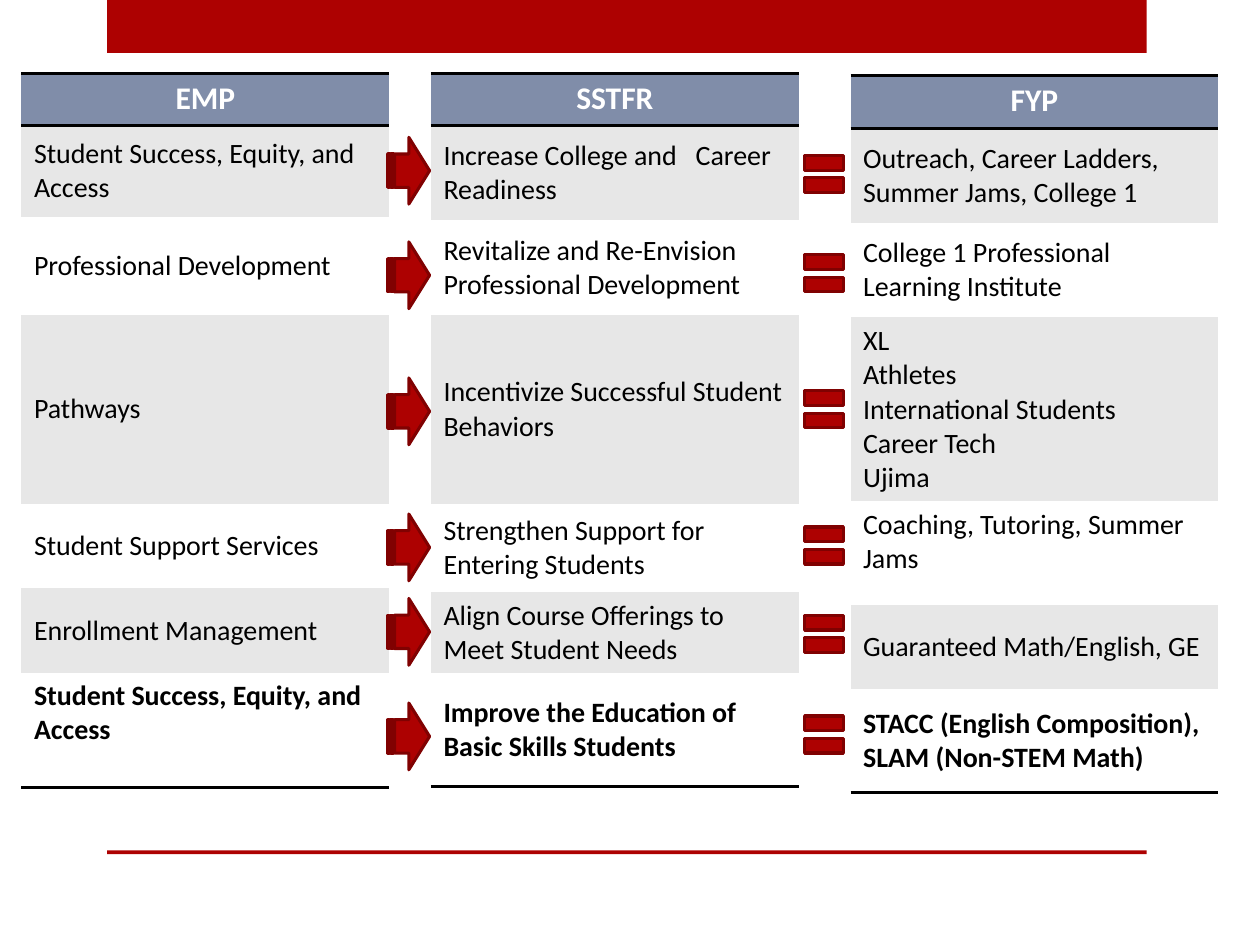
from dataclasses import dataclass

from lxml.etree import SubElement
from pptx import Presentation
from pptx.dml.color import RGBColor
from pptx.enum.shapes import MSO_SHAPE as Shape
from pptx.enum.text import MSO_ANCHOR as Anchor, PP_ALIGN as Align
from pptx.oxml.ns import qn
from pptx.util import Inches, Pt

COLORS = {
    "red": "AD0101",
    "dark_red": "800101",
    "header": "808DA9",
    "band": "E7E7E7",
    "white": "FFFFFF",
    "black": "000000",
}
FONT = "Calibri"
PLAIN_TABLE_STYLE = "{2D5ABB26-0587-4C30-8999-92F81FD0307C}"
COLUMN_WIDTH = 2.92


@dataclass
class Row:
    text: str
    height: float
    anchor: Anchor = Anchor.MIDDLE


@dataclass
class PlanColumn:
    title: str
    left: float
    top: float
    rows: list[Row]


@dataclass
class SymbolColumn:
    kind: Shape
    left: float
    width: float
    height: float
    tops: list[float]


PLAN_COLUMNS = [
    PlanColumn("EMP", 0.17, 0.58, [
        Row("Student Success, Equity, and Access", 0.72),
        Row("Professional Development", 0.78),
        Row("Pathways", 1.5),
        Row("Student Support Services", 0.67),
        Row("Enrollment Management", 0.67),
        Row("Student Success, Equity, and Access", 0.91, Anchor.TOP),
    ]),
    PlanColumn("SSTFR", 3.42, 0.58, [
        Row("Increase College and   Career Readiness", 0.75),
        Row("Revitalize and Re-Envision Professional Development", 0.75),
        Row("Incentivize Successful Student Behaviors", 1.5),
        Row("Strengthen Support for Entering Students", 0.7),
        Row("Align Course Offerings to Meet Student Needs", 0.64, Anchor.TOP),
        Row("Improve the Education of Basic Skills Students", 0.9),
    ]),
    PlanColumn("FYP", 6.75, 0.6, [
        Row("Outreach, Career Ladders, Summer Jams, College 1", 0.75),
        Row("College 1 Professional Learning Institute", 0.75),
        Row("XL\nAthletes\nInternational Students\nCareer Tech\nUjima", 1.46),
        Row("Coaching, Tutoring, Summer Jams", 0.82, Anchor.TOP),
        Row("Guaranteed Math/English, GE", 0.67),
        Row("STACC (English Composition), SLAM (Non-STEM Math)", 0.82),
    ]),
]
SYMBOL_COLUMNS = [
    SymbolColumn(Shape.STRIPED_RIGHT_ARROW, 3.08, 0.33, 0.53,
                 [1.09, 1.92, 3, 4.08, 4.75, 5.58]),
    SymbolColumn(Shape.MATH_EQUAL, 6.33, 0.42, 0.5,
                 [1.13, 1.92, 3, 4.08, 4.78, 5.58]),
]


def color(name: str) -> RGBColor:
    return RGBColor.from_string(COLORS[name])


def add_red_shape(slide, kind: Shape, left: float, top: float, width: float,
                  height: float, outlined: bool = False) -> None:
    shape = slide.shapes.add_shape(
        kind, Inches(left), Inches(top), Inches(width), Inches(height))
    shape.shadow.inherit = False
    shape.fill.solid()
    shape.fill.fore_color.rgb = color("red")
    if outlined:
        shape.line.color.rgb = color("dark_red")
        shape.line.width = Pt(1.75)
    else:
        shape.line.fill.background()


def add_borders(cell, sides: list[str]) -> None:
    properties = cell._tc.get_or_add_tcPr()
    for index, side in enumerate(sides):
        line = SubElement(properties, qn(f"a:ln{side}"), w=str(Pt(2)))
        fill = SubElement(line, qn("a:solidFill"))
        SubElement(fill, qn("a:srgbClr"), val=COLORS["black"])
        properties.insert(index, line)


def fill_cell(cell, text: str, fill: str, size: int, font_color: str,
              bold: bool, align: Align, anchor: Anchor) -> None:
    cell.text = text
    cell.vertical_anchor = anchor
    cell.fill.solid()
    cell.fill.fore_color.rgb = color(fill)
    for paragraph in cell.text_frame.paragraphs:
        paragraph.alignment = align
        paragraph.font.name = FONT
        paragraph.font.size = Pt(size)
        paragraph.font.bold = bold
        paragraph.font.color.rgb = color(font_color)


def add_plan_table(slide, column: PlanColumn) -> None:
    rows = [Row(column.title, 0.42, Anchor.TOP), *column.rows]
    frame = slide.shapes.add_table(
        len(rows), 1, Inches(column.left), Inches(column.top),
        Inches(COLUMN_WIDTH), Inches(sum(row.height for row in rows)))
    table = frame.table
    table._tbl.tblPr.find(qn("a:tableStyleId")).text = PLAIN_TABLE_STYLE
    last = len(rows) - 1
    for index, row in enumerate(rows):
        table.rows[index].height = Inches(row.height)
        cell = table.cell(index, 0)
        if index == 0:
            fill_cell(cell, row.text, "header", 18, "white", True,
                      Align.CENTER, row.anchor)
            add_borders(cell, ["T", "B"])
        else:
            fill_cell(cell, row.text, "band" if index % 2 else "white", 16,
                      "black", index == last, Align.LEFT, row.anchor)
    add_borders(table.cell(last, 0), ["B"])


def main() -> None:
    """Build the slide that maps each plan goal to its first-year programs."""
    presentation = Presentation()
    presentation.slide_width = Inches(10)
    presentation.slide_height = Inches(7.5)
    slide = presentation.slides.add_slide(presentation.slide_layouts[6])
    for top, height in [(0, 0.42), (6.75, 0.03)]:
        add_red_shape(slide, Shape.RECTANGLE, 0.85, top, 8.25, height)
    for column in PLAN_COLUMNS:
        add_plan_table(slide, column)
    for symbols in SYMBOL_COLUMNS:
        for top in symbols.tops:
            add_red_shape(slide, symbols.kind, symbols.left, top,
                          symbols.width, symbols.height, outlined=True)
    presentation.save("out.pptx")


if __name__ == "__main__":
    main()
